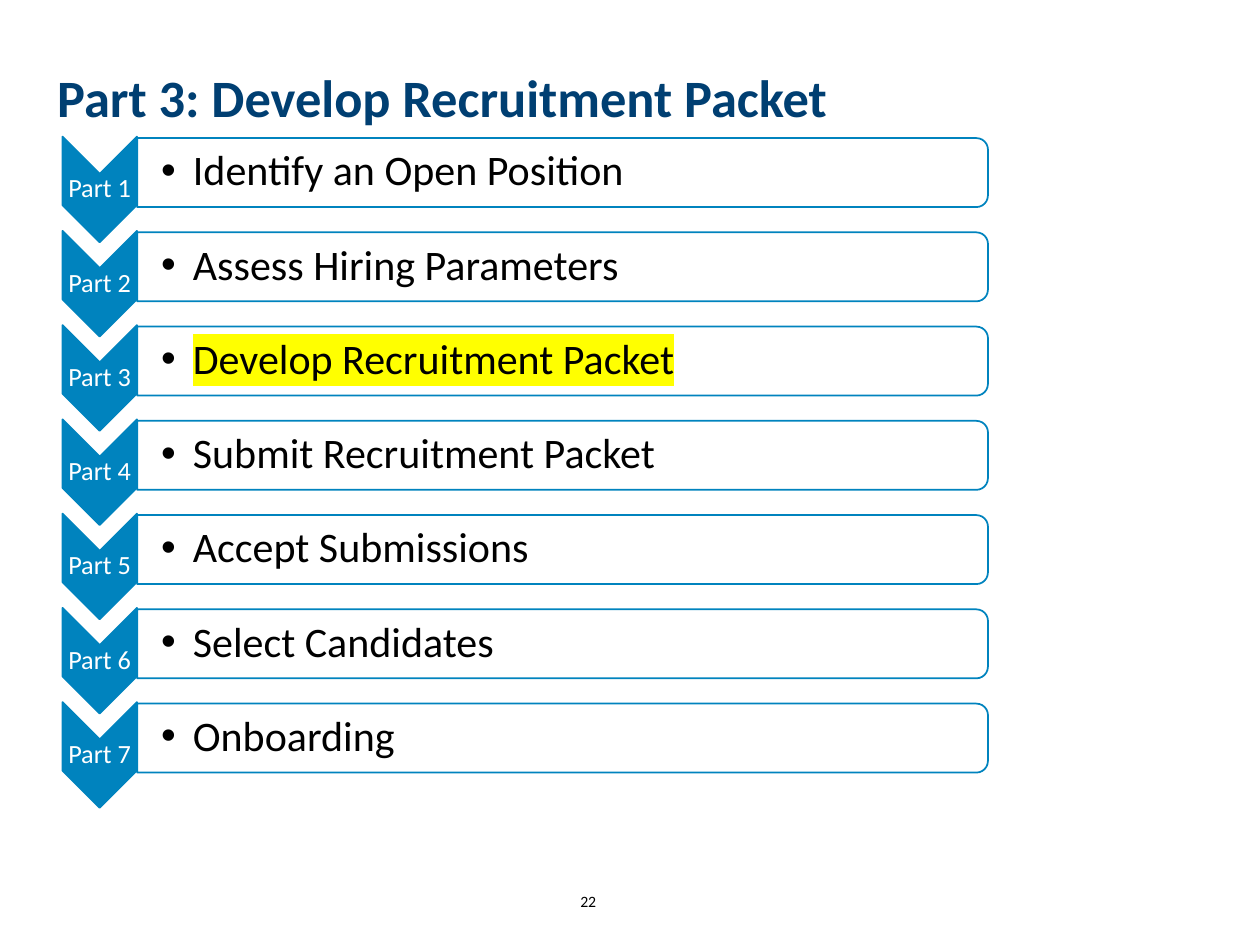
from lxml import etree
from pptx import Presentation
from pptx import util as u
from pptx.dml.color import RGBColor
from pptx.enum import shapes, text
from pptx.oxml import ns

NAVY = RGBColor(0x00, 0x3F, 0x72)
BLUE = RGBColor(0x00, 0x83, 0xBE)
WHITE = RGBColor(0xFF, 0xFF, 0xFF)
BLACK = RGBColor(0x00, 0x00, 0x00)
YELLOW = RGBColor(0xFF, 0xFF, 0x00)

PARTS = [
    "Identify an Open Position",
    "Assess Hiring Parameters",
    "Develop Recruitment Packet",
    "Submit Recruitment Packet",
    "Accept Submissions",
    "Select Candidates",
    "Onboarding",
]
CURRENT_PART = 3
ROW_PITCH = 1.9


class SlideBuilder:
    """Holds the text style and the slide being filled; lengths are in cm."""

    font_name = "Calibri"

    def __init__(self, slide):
        self.slide = slide

    def format_text(self, frame, size, color, align, spacing=None, bold=False):
        frame.word_wrap = True
        frame.auto_size = text.MSO_AUTO_SIZE.NONE
        frame.vertical_anchor = text.MSO_ANCHOR.MIDDLE
        paragraph = frame.paragraphs[0]
        paragraph.alignment = align
        paragraph.line_spacing = spacing
        for run in paragraph.runs:
            run.font.name = self.font_name
            run.font.size = u.Pt(size)
            run.font.bold = bold
            run.font.color.rgb = color

    def title(self, words, left, top, width, height):
        shape = self.slide.shapes.title
        shape.left, shape.top = u.Cm(left), u.Cm(top)
        shape.width, shape.height = u.Cm(width), u.Cm(height)
        shape.text_frame.text = words
        self.format_text(shape.text_frame, 30, NAVY, text.PP_ALIGN.LEFT, 0.9, bold=True)

    def text_box(self, parent, words, box, size, color, align, spacing=None, insets=None):
        shape = parent.shapes.add_textbox(*map(u.Cm, box))
        frame = shape.text_frame
        frame.text = words
        if insets:
            left, other = insets
            frame.margin_left = u.Cm(left)
            frame.margin_top = frame.margin_right = frame.margin_bottom = u.Cm(other)
        self.format_text(frame, size, color, align, spacing)
        return frame.paragraphs[0]

    def turned_shape(self, parent, kind, center_x, center_y, width, height, fill):
        """Add a preset shape, turned a quarter clockwise about its centre."""
        shape = parent.shapes.add_shape(
            kind, u.Cm(center_x - width / 2), u.Cm(center_y - height / 2),
            u.Cm(width), u.Cm(height))
        shape.rotation = 90
        shape.shadow.inherit = False
        shape.fill.solid()
        shape.fill.fore_color.rgb = fill
        shape.line.color.rgb = BLUE
        shape.line.width = u.Pt(1)

    def bullet(self, paragraph):
        properties = paragraph._p.get_or_add_pPr()
        indent = u.Cm(0.64)
        properties.set("marL", str(indent))
        properties.set("indent", str(-indent))
        etree.SubElement(properties, ns.qn("a:buFont"), typeface="Arial")
        etree.SubElement(properties, ns.qn("a:buChar"), char="•")

    def highlight(self, paragraph):
        for run in paragraph.runs:
            mark = etree.Element(ns.qn("a:highlight"))
            etree.SubElement(mark, ns.qn("a:srgbClr"), val=str(YELLOW))
            run.font._element.find(ns.qn("a:latin")).addprevious(mark)

    def part_row(self, number, words):
        offset = (number - 1) * ROW_PITCH
        group = self.slide.shapes.add_group_shape()
        self.turned_shape(group, shapes.MSO_SHAPE.CHEVRON,
                          2.01, 3.82 + offset, 2.13, 1.5, BLUE)
        self.text_box(group, f"Part {number}", (1.26, 3.5 + offset, 1.5, 0.64),
                      15, WHITE, text.PP_ALIGN.CENTER, 0.9, (0.03, 0.03))
        self.turned_shape(group, shapes.MSO_SHAPE.ROUND_2_SAME_RECTANGLE,
                          11.34, 3.48 + offset, 1.39, 17.15, WHITE)
        item = self.text_box(group, words, (2.77, 2.85 + offset, 17.07, 1.25),
                             24, BLACK, text.PP_ALIGN.LEFT, 0.9, (0.48, 0.05))
        self.bullet(item)
        if number == CURRENT_PART:
            self.highlight(item)


def main():
    presentation = Presentation()
    presentation.slide_width = u.Cm(25.4)
    presentation.slide_height = u.Cm(19.05)
    title_only = presentation.slide_layouts[5]
    builder = SlideBuilder(presentation.slides.add_slide(title_only))

    builder.title("Part 3: Develop Recruitment Packet", 0.9, 0.94, 20.24, 2.16)
    builder.text_box(builder.slide, "22", (11.15, 17.65, 1.42, 1.02),
                     9, BLACK, text.PP_ALIGN.CENTER)
    for number, words in enumerate(PARTS, start=1):
        builder.part_row(number, words)

    presentation.save("out.pptx")


if __name__ == "__main__":
    main()
